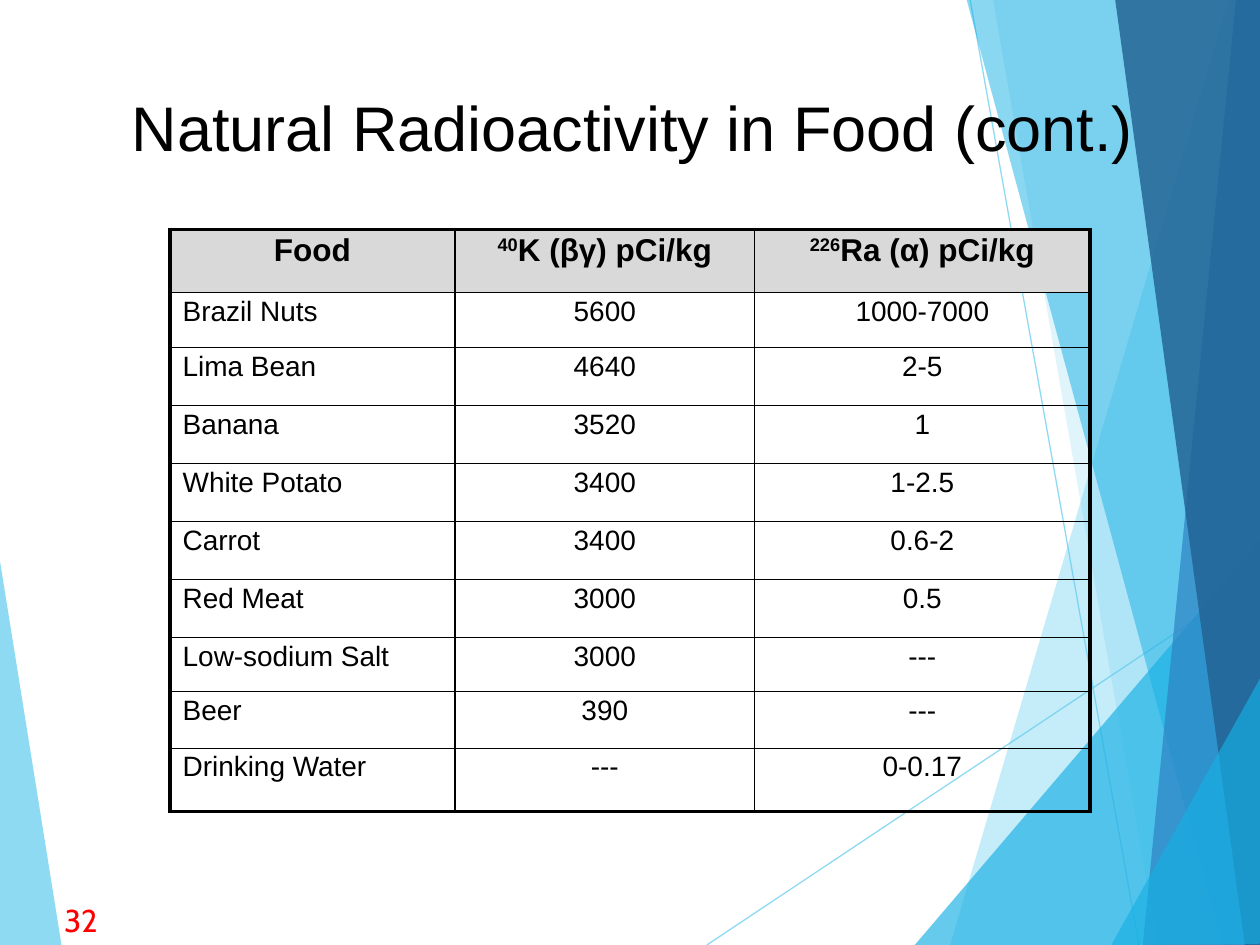
from typing import NamedTuple

from lxml import etree
from pptx import Presentation
from pptx.dml.color import RGBColor
from pptx.enum.shapes import MSO_CONNECTOR
from pptx.enum.text import MSO_ANCHOR, MSO_AUTO_SIZE, PP_ALIGN
from pptx.oxml.ns import qn
from pptx.util import Inches, Pt

STRAIGHT = MSO_CONNECTOR.STRAIGHT
BOTTOM = MSO_ANCHOR.BOTTOM
NO_FIT = MSO_AUTO_SIZE.NONE
LEFT, CENTER = PP_ALIGN.LEFT, PP_ALIGN.CENTER

COLORS = {
    "sky": "5FCBEF", "cyan": "17B0E4", "blue": "2E83C3", "navy": "226292",
    "black": "000000", "header": "D9D9D9", "red": "FF0000",
}


class Facet(NamedTuple):
    color: str
    alpha: int
    points: list


class Ray(NamedTuple):
    start: tuple
    end: tuple


class Run(NamedTuple):
    text: str
    superscript: bool = False


LEFT_FACET = Facet("sky", 70, [(-0.01, 4.39), (0.49, 7.51), (-0.01, 7.5)])
RAYS = [Ray((5.61, 7.5), (10.01, 4.57)), Ray((7.7, 0), (9.04, 7.5))]
RIGHT_FACETS = [
    Facet("sky", 36, [(9.75, 0), (7.54, 7.5), (10.02, 7.51), (10.01, 0.01)]),
    Facet("sky", 20, [(7.88, -0.01), (9.19, 7.5), (10.01, 7.5), (10.01, -0.01)]),
    Facet("cyan", 66, [(7.26, 7.5), (10, 4.29), (10.01, 7.5)]),
    Facet("cyan", 50, [(7.67, -0.01), (9.7, 7.5), (10.01, 7.49), (10.01, -0.01)]),
    Facet("blue", 70, [(9.81, -0.01), (9.07, 7.5), (10.01, 7.5), (10, -0.01)]),
    Facet("navy", 82, [(8.85, -0.01), (9.88, 7.5), (10.02, 7.5), (10, -0.01)]),
    Facet("cyan", 66, [(8.82, 7.5), (10.02, 5.35), (10.02, 7.49)]),
]

HEADER = [
    [Run("Food")],
    [Run("40", True), Run("K (βγ) pCi/kg")],
    [Run("226", True), Run("Ra (α) pCi/kg")],
]
FOODS = [
    ("Brazil Nuts", "5600", "1000-7000"),
    ("Lima Bean", "4640", "2-5"),
    ("Banana", "3520", "1"),
    ("White Potato", "3400", "1-2.5"),
    ("Carrot", "3400", "0.6-2"),
    ("Red Meat", "3000", "0.5"),
    ("Low-sodium Salt", "3000", "---"),
    ("Beer", "390", "---"),
    ("Drinking Water", "---", "0-0.17"),
]
COL_WIDTHS = [2.26, 2.38, 2.66]
ROW_HEIGHTS = [0.5, 0.44, 0.46, 0.46, 0.46, 0.46, 0.46, 0.43, 0.45, 0.5]


def rgb(name: str) -> RGBColor:
    return RGBColor.from_string(COLORS[name])


def set_alpha(fill, percent: int) -> None:
    color = fill._xPr.find(".//" + qn("a:srgbClr"))
    etree.SubElement(color, qn("a:alpha"), val=str(percent * 1000))


def add_facet(s, facet: Facet) -> None:
    points = [(Inches(x), Inches(y)) for x, y in facet.points]
    builder = s.shapes.build_freeform(*points[0], scale=1.0)
    builder.add_line_segments(points[1:], close=True)
    sp = builder.convert_to_shape()
    sp.shadow.inherit = False
    sp.line.fill.background()
    sp.fill.solid()
    sp.fill.fore_color.rgb = rgb(facet.color)
    set_alpha(sp.fill, facet.alpha)


def add_ray(s, ray: Ray) -> None:
    ends = [Inches(v) for v in ray.start + ray.end]
    sp = s.shapes.add_connector(STRAIGHT, *ends)
    sp.line.width = Pt(0.75)
    sp.line.color.rgb = rgb("sky")
    set_alpha(sp.line.fill, 70)
    etree.SubElement(sp._element.spPr, qn("a:effectLst"))


def add_run(p, run: Run, size: float, color: str = "black",
            font: str = "Arial", bold: bool = False) -> None:
    r = p.add_run()
    r.text = run.text
    r.font.name = font
    r.font.size = Pt(size)
    r.font.bold = bold
    r.font.color.rgb = rgb(color)
    if run.superscript:
        r._r.get_or_add_rPr().set("baseline", "30000")


def set_borders(cell, widths: dict) -> None:
    tcPr = cell._tc.get_or_add_tcPr()
    for i, (side, width) in enumerate(widths.items()):
        ln = etree.Element(qn("a:ln" + side), w=str(Pt(width)))
        fill = etree.SubElement(ln, qn("a:solidFill"))
        etree.SubElement(fill, qn("a:srgbClr"), val=COLORS["black"])
        tcPr.insert(i, ln)


def add_title(s, text: str) -> None:
    sp = s.shapes.title
    sp.left, sp.top, sp.width, sp.height = map(Inches, (0.71, 0.61, 8.62, 0.7))
    tf = sp.text_frame
    tf.auto_size = NO_FIT
    tf.vertical_anchor = BOTTOM
    tf.margin_bottom = Inches(0.01)
    p = tf.paragraphs[0]
    p.alignment = CENTER
    add_run(p, Run(text), 36)
    s.shapes._spTree.append(sp._element)


def add_food_table(s) -> None:
    rows = [HEADER] + [[[Run(text)] for text in food] for food in FOODS]
    last_row, last_col = len(rows) - 1, len(COL_WIDTHS) - 1
    table = s.shapes.add_table(
        len(rows), len(COL_WIDTHS), Inches(1.35), Inches(1.82),
        Inches(sum(COL_WIDTHS)), Inches(sum(ROW_HEIGHTS))).table
    table.first_row = table.horz_banding = False
    for column, width in zip(table.columns, COL_WIDTHS):
        column.width = Inches(width)
    for row, height in zip(table.rows, ROW_HEIGHTS):
        row.height = Inches(height)
    for i, row in enumerate(rows):
        for j, runs in enumerate(row):
            cell = table.cell(i, j)
            is_header = i == 0
            if is_header:
                cell.fill.solid()
                cell.fill.fore_color.rgb = rgb("header")
            else:
                cell.fill.background()
            p = cell.text_frame.paragraphs[0]
            p.alignment = CENTER if is_header or j else LEFT
            p.line_spacing = 0.9
            for run in runs:
                add_run(p, run, 18 if is_header else 16, bold=is_header)
            outer = {"L": j == 0, "R": j == last_col,
                     "T": i == 0, "B": i == last_row}
            set_borders(cell, {k: 2.25 if v else 1 for k, v in outer.items()})


def add_page_number(s, number: str) -> None:
    sp = s.shapes.add_textbox(*map(Inches, (0.41, 7.1, 0.51, 0.4)))
    tf = sp.text_frame
    tf.word_wrap = True
    add_run(tf.paragraphs[0], Run(number), 18, "red", "Cabin")


def main() -> None:
    prs = Presentation()
    prs.slide_width, prs.slide_height = Inches(10), Inches(7.5)
    s = prs.slides.add_slide(prs.slide_layouts[5])
    add_facet(s, LEFT_FACET)
    for ray in RAYS:
        add_ray(s, ray)
    for facet in RIGHT_FACETS:
        add_facet(s, facet)
    add_title(s, "Natural Radioactivity in Food (cont.)")
    add_food_table(s)
    add_page_number(s, "32")
    prs.save("out.pptx")


if __name__ == "__main__":
    main()
